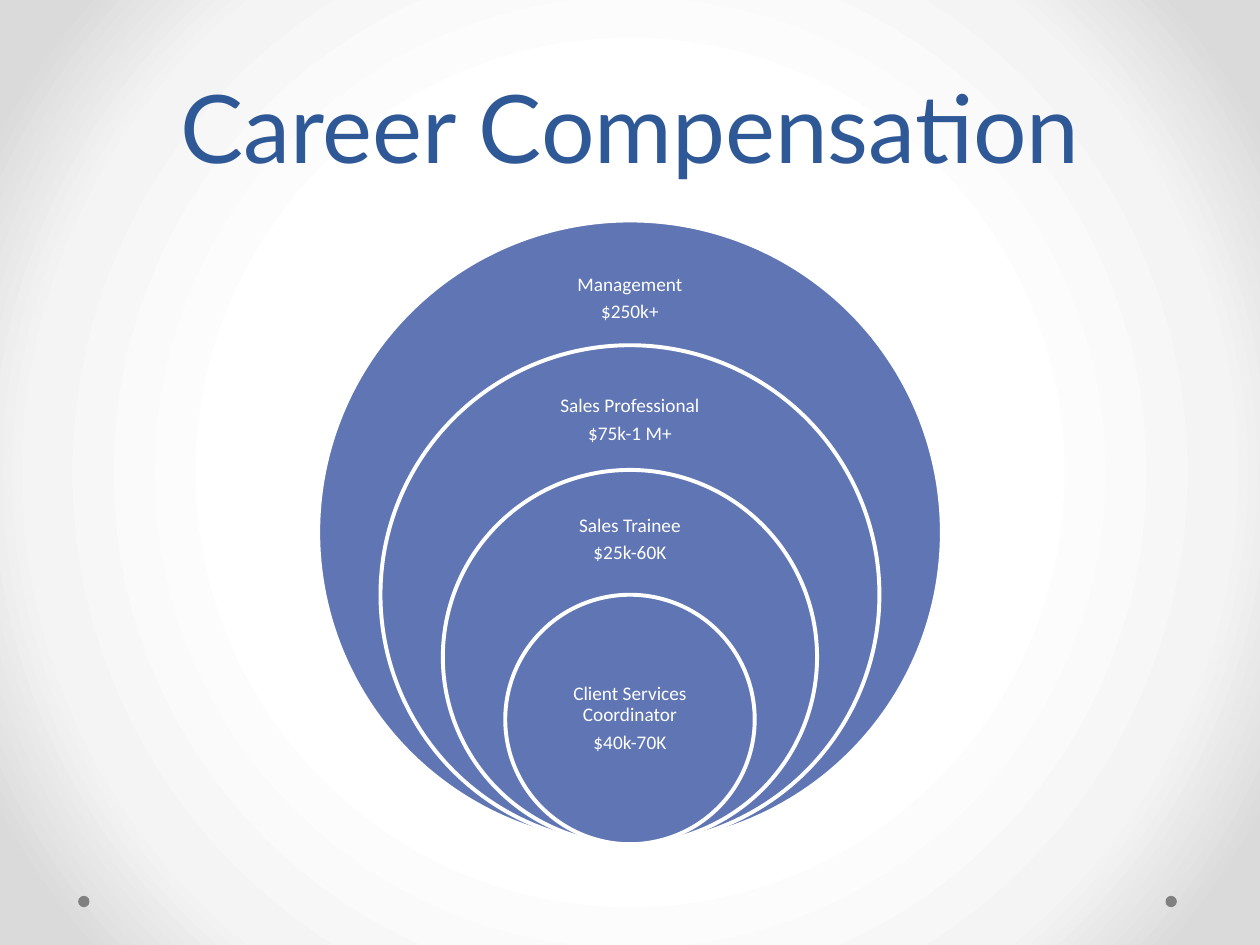
"""Build the Career Compensation slide with nested circles."""
from pptx import Presentation
from pptx.dml.color import RGBColor
from pptx.enum.shapes import MSO_SHAPE
from pptx.enum.text import MSO_ANCHOR, PP_ALIGN
from pptx.oxml import parse_xml
from pptx.oxml.ns import nsdecls
from pptx.util import Inches, Pt

OVAL = MSO_SHAPE.OVAL
MIDDLE, BOTTOM = MSO_ANCHOR.MIDDLE, MSO_ANCHOR.BOTTOM
CENTER = PP_ALIGN.CENTER

WHITE = RGBColor(0xFF, 0xFF, 0xFF)
LIGHT_GRAY = RGBColor(0xF4, 0xF4, 0xF4)
EDGE_GRAY = RGBColor(0xDA, 0xDA, 0xDA)
DOT_GRAY = RGBColor(0x80, 0x80, 0x80)
CIRCLE_BLUE = RGBColor(0x60, 0x76, 0xB4)
TITLE_BLUE = RGBColor(0x2F, 0x58, 0x97)

BACKGROUND_STOPS = [(50, WHITE), (76, LIGHT_GRAY), (92, EDGE_GRAY)]
TITLE_FONT = {"name": "Lato", "size": Pt(54)}
TITLE_PARAGRAPH = {"alignment": CENTER, "line_spacing": Pt(58)}
LABEL_FONT = {"name": "Calibri", "size": Pt(11)}
LABEL_PARAGRAPH = {"alignment": CENTER, "line_spacing": 0.9, "space_after": Pt(3.85)}
LABEL_FRAME = {
    "vertical_anchor": MIDDLE,
    "margin_left": Inches(0.09),
    "margin_right": Inches(0.09),
    "margin_top": Inches(0.09),
    "margin_bottom": Inches(0.09),
}

CENTER_X = 5
CIRCLE_BOTTOM = 6.7
OUTER_DIAMETER = 4.95
DIAMETER_STEP = 0.99
ROLES = [
    ("Management", "$250k+", (2, 1.38, 0.74)),
    ("Sales Professional", "$75k-1 M+", (2.98, 1.38, 0.71)),
    ("Sales Trainee", "$25k-60K", (3.95, 1.38, 0.67)),
    ("Client Services Coordinator", "$40k-70K", (5.21, 1.4, 0.99)),
]


def apply_format(target, values):
    for name, value in values.items():
        setattr(target, name, value)


class SlideBuilder:
    def __init__(self, presentation):
        self.slide = presentation.slides.add_slide(presentation.slide_layouts[6])

    def radial_background(self, stops):
        self.slide.background.fill.solid()
        properties = self.slide.element.cSld.bg.bgPr
        stop_xml = "".join(
            f'<a:gs pos="{position * 1000}"><a:srgbClr val="{color}"/></a:gs>'
            for position, color in stops
        )
        gradient = parse_xml(
            f'<a:gradFill {nsdecls("a")} rotWithShape="1"><a:gsLst>{stop_xml}</a:gsLst>'
            '<a:path path="circle">'
            '<a:fillToRect l="50000" t="50000" r="50000" b="50000"/>'
            "</a:path></a:gradFill>"
        )
        properties.replace(properties[0], gradient)

    def circle(self, left, top, diameter, color, outline=None):
        size = Inches(diameter)
        shape = self.slide.shapes.add_shape(OVAL, Inches(left), Inches(top), size, size)
        shape.shadow.inherit = False
        shape.fill.solid()
        shape.fill.fore_color.rgb = color
        if outline is None:
            shape.line.fill.background()
        else:
            shape.line.color.rgb = outline
            shape.line.width = Pt(2.25)

    def text(self, box, lines, color, font, paragraph_format, frame_format):
        shape = self.slide.shapes.add_textbox(*map(Inches, box))
        frame = shape.text_frame
        frame.word_wrap = True
        apply_format(frame, frame_format)
        frame.text = "\n".join(lines)
        for paragraph in frame.paragraphs:
            apply_format(paragraph, paragraph_format)
            run = paragraph.runs[0]
            apply_format(run.font, font)
            run.font.color.rgb = color


def main():
    presentation = Presentation()
    presentation.slide_width = Inches(10)
    presentation.slide_height = Inches(7.5)
    builder = SlideBuilder(presentation)
    builder.radial_background(BACKGROUND_STOPS)
    for left in (9.25, 0.62):
        builder.circle(left, 7.11, 0.09, DOT_GRAY)
    for index, (role, pay, (top, width, height)) in enumerate(ROLES):
        diameter = OUTER_DIAMETER - index * DIAMETER_STEP
        builder.circle(CENTER_X - diameter / 2, CIRCLE_BOTTOM - diameter,
                       diameter, CIRCLE_BLUE, WHITE)
        builder.text((CENTER_X - width / 2, top, width, height), (role, pay),
                     WHITE, LABEL_FONT, LABEL_PARAGRAPH, LABEL_FRAME)
    builder.text((0.5, 0.17, 9, 1.33), ("Career Compensation",), TITLE_BLUE,
                 TITLE_FONT, TITLE_PARAGRAPH, {"vertical_anchor": BOTTOM})
    presentation.save("out.pptx")


if __name__ == "__main__":
    main()
